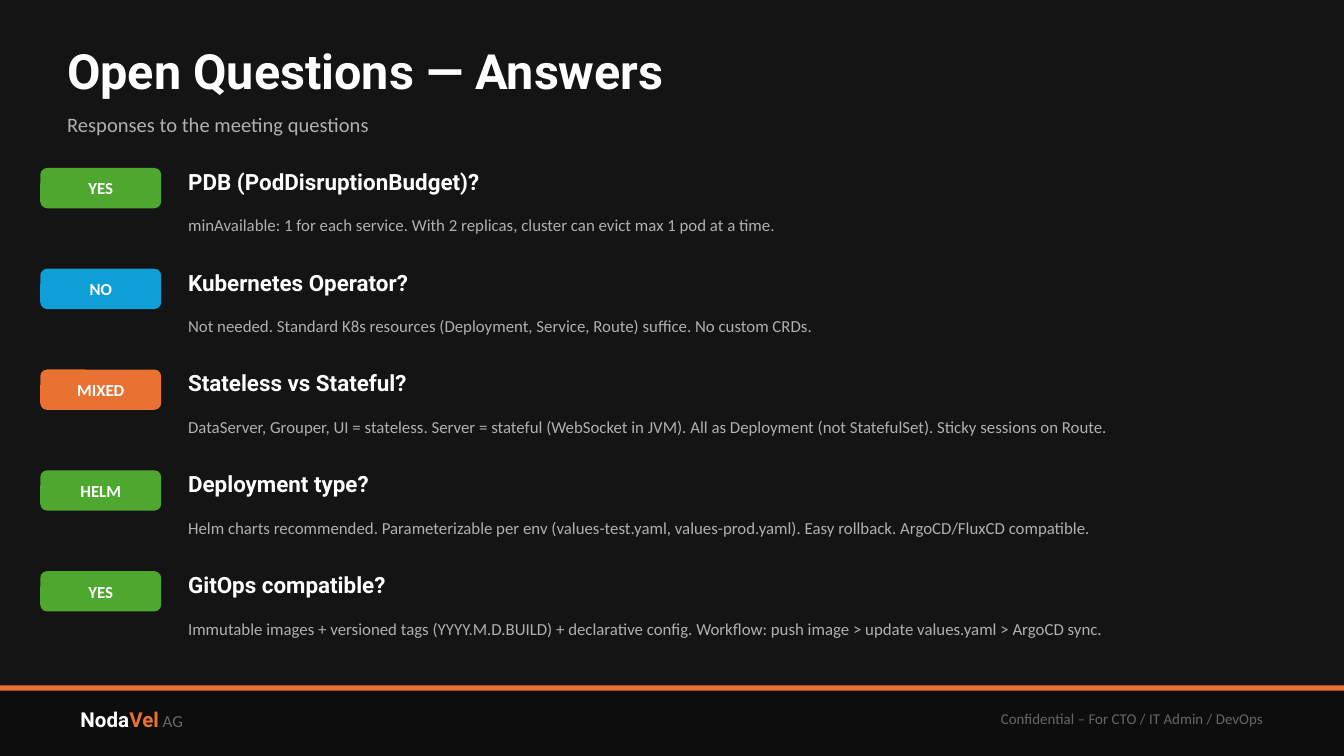
import pptx
import pptx.util
from pptx.dml.color import RGBColor
from pptx.enum.shapes import MSO_SHAPE
from pptx.enum.text import MSO_ANCHOR, MSO_AUTO_SIZE, PP_ALIGN

DARK = RGBColor(0x14, 0x14, 0x14)
BLACK = RGBColor(0x0D, 0x0D, 0x0D)
WHITE = RGBColor(0xFF, 0xFF, 0xFF)
SILVER = RGBColor(0xB0, 0xB0, 0xB0)
GREY = RGBColor(0x66, 0x66, 0x66)
GREEN = RGBColor(0x4E, 0xA7, 0x2E)
BLUE = RGBColor(0x0F, 0x9E, 0xD5)
ORANGE = RGBColor(0xE9, 0x71, 0x32)

HEAD = "Roboto"
BODY = "Calibri"

WIDE = pptx.util.Inches(10)
HIGH = WIDE * 9 // 16
CELL = WIDE / 200  # square grid, 200 columns wide
ROWS = HIGH / CELL
PITCH = 15  # rows from one answer to the next

ITEMS = [
    ("YES", GREEN, "PDB (PodDisruptionBudget)?",
     "minAvailable: 1 for each service. With 2 replicas, "
     "cluster can evict max 1 pod at a time."),
    ("NO", BLUE, "Kubernetes Operator?",
     "Not needed. Standard K8s resources (Deployment, Service, Route) "
     "suffice. No custom CRDs."),
    ("MIXED", ORANGE, "Stateless vs Stateful?",
     "DataServer, Grouper, UI = stateless. Server = stateful (WebSocket "
     "in JVM). All as Deployment (not StatefulSet). Sticky sessions on Route."),
    ("HELM", GREEN, "Deployment type?",
     "Helm charts recommended. Parameterizable per env (values-test.yaml, "
     "values-prod.yaml). Easy rollback. ArgoCD/FluxCD compatible."),
    ("YES", GREEN, "GitOps compatible?",
     "Immutable images + versioned tags (YYYY.M.D.BUILD) + declarative "
     "config. Workflow: push image > update values.yaml > ArgoCD sync."),
]


def grid(*box):
    """Turn columns and rows into slide lengths."""
    return [round(n * CELL) for n in box]


def style(run, size, color, face=BODY, bold=False):
    font = run.font
    font.name, font.size, font.bold = face, pptx.util.Pt(size), bold
    font.color.rgb = color


def setup(frame, align=PP_ALIGN.LEFT, inset=True):
    """Centre a frame vertically; without inset, drop its margins."""
    frame.word_wrap = True
    frame.auto_size = MSO_AUTO_SIZE.NONE
    frame.vertical_anchor = MSO_ANCHOR.MIDDLE
    frame.paragraphs[0].alignment = align
    if not inset:
        frame.margin_left = frame.margin_right = 0
        frame.margin_top = frame.margin_bottom = 0


def fill_text(frame, text, *look, align=PP_ALIGN.LEFT, inset=False):
    frame.text = text
    setup(frame, align, inset)
    style(frame.paragraphs[0].runs[0], *look)


def add_text(slide, box, text, *look, **place):
    frame = slide.shapes.add_textbox(*grid(*box)).text_frame
    fill_text(frame, text, *look, **place)


def add_block(slide, box, color, kind=MSO_SHAPE.RECTANGLE):
    shape = slide.shapes.add_shape(kind, *grid(*box))
    shape.shadow.inherit = False
    shape.fill.solid()
    shape.fill.fore_color.rgb = color
    shape.line.fill.background()
    return shape


def add_header(slide, left, top, width):
    title = slide.shapes.title
    title.left, title.top, title.width, title.height = grid(left, top, width, 11)
    fill_text(title.text_frame, "Open Questions — Answers", 26, WHITE, HEAD, True)
    add_text(slide, (left, top + 10, width, 7),
             "Responses to the meeting questions", 11, SILVER)


def add_answer(slide, left, top, width, item):
    """Place a badge with its question and answer to the right."""
    label, color, ask, reply = item
    badge = add_block(slide, (left, top + 1, 18, 6), color,
                      MSO_SHAPE.ROUNDED_RECTANGLE)
    badge.adjustments[0] = 0.17
    fill_text(badge.text_frame, label, 9, WHITE, BODY, True,
              align=PP_ALIGN.CENTER)
    inner, rest = left + 22, width - 22
    add_text(slide, (inner, top, rest, 6), ask, 12, WHITE, HEAD, True)
    add_text(slide, (inner, top + 6, rest, 7), reply, 9, SILVER)


def add_footer(slide, top, width):
    add_block(slide, (0, top, width, ROWS - top), BLACK)
    add_block(slide, (0, top, width, 0.8), ORANGE)
    brand = slide.shapes.add_textbox(*grid(10, top + 1, 60, 8)).text_frame
    setup(brand)
    for text, *look in [("Noda", 11, WHITE, HEAD, True),
                        ("Vel", 11, ORANGE, HEAD, True),
                        (" AG", 9, GREY)]:
        run = brand.paragraphs[0].add_run()
        run.text = text
        style(run, *look)
    add_text(slide, (width - 90, top + 1, 80, 8),
             "Confidential – For CTO / IT Admin / DevOps", 8, GREY,
             align=PP_ALIGN.RIGHT, inset=True)


def main():
    deck = pptx.Presentation()
    deck.slide_width, deck.slide_height = WIDE, HIGH
    slide = deck.slides.add_slide(deck.slide_layouts.get_by_name("Title Only"))
    slide.background.fill.solid()
    slide.background.fill.fore_color.rgb = DARK
    add_footer(slide, 102, 200)
    add_header(slide, 10, 5, 180)
    for row, item in enumerate(ITEMS):
        add_answer(slide, 6, 24 + row * PITCH, 188, item)
    deck.save("out.pptx")


if __name__ == "__main__":
    main()
